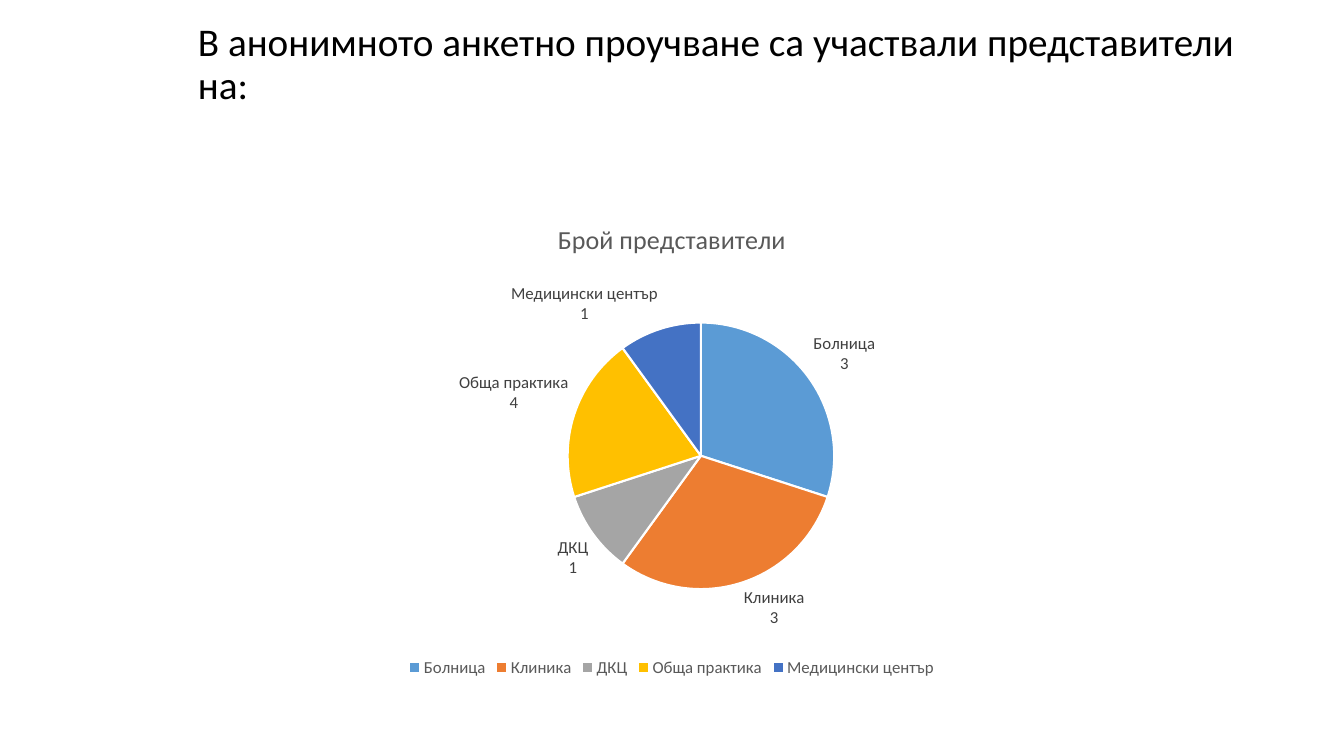
"""Build a slide with a survey heading and a pie chart of the participants."""
from lxml import etree
from pptx import Presentation
from pptx.chart.data import CategoryChartData
from pptx.dml.color import RGBColor
from pptx.enum.chart import XL_CHART_TYPE, XL_LABEL_POSITION, XL_LEGEND_POSITION
from pptx.enum.text import MSO_ANCHOR
from pptx.oxml.ns import qn
from pptx.util import Pt

PIE = XL_CHART_TYPE.PIE
OUTSIDE_END = XL_LABEL_POSITION.OUTSIDE_END
LEGEND_BOTTOM = XL_LEGEND_POSITION.BOTTOM
MIDDLE = MSO_ANCHOR.MIDDLE

EMU_PER_PX = 9525
FONT_NAME = "Calibri"
BLACK = RGBColor(0x00, 0x00, 0x00)
WHITE = RGBColor(0xFF, 0xFF, 0xFF)
GREY = RGBColor(0x59, 0x59, 0x59)
DARK_GREY = RGBColor(0x40, 0x40, 0x40)
BLUE = RGBColor(0x5B, 0x9B, 0xD5)
ORANGE = RGBColor(0xED, 0x7D, 0x31)
SILVER = RGBColor(0xA5, 0xA5, 0xA5)
GOLD = RGBColor(0xFF, 0xC0, 0x00)
ROYAL_BLUE = RGBColor(0x44, 0x72, 0xC4)

HEADING_FORMAT = {"size": Pt(28), "color": BLACK}
CHART_TITLE_FORMAT = {"size": Pt(18.6), "color": GREY, "bold": False}
LABEL_FORMAT = {"size": Pt(12), "color": DARK_GREY, "bold": False}
LEGEND_FORMAT = {"size": Pt(12), "color": GREY}

HEADING = "В анонимното анкетно проучване са участвали представители на:"
CHART_TITLE = "Брой представители"
PARTICIPANTS = [
    ("Болница", 30, 3, BLUE),
    ("Клиника", 30, 3, ORANGE),
    ("ДКЦ", 10, 1, SILVER),
    ("Обща практика", 20, 4, GOLD),
    ("Медицински център", 10, 1, ROYAL_BLUE),
]
PIE_LAYOUT = {"x": 0.41, "y": 0.25, "w": 0.23, "h": 0.56}


def px(*lengths):
    """Turn pixel lengths into a list of EMU lengths."""
    return [length * EMU_PER_PX for length in lengths]


def format_font(font, values):
    """Apply a dict of format values to a font."""
    font.name = FONT_NAME
    for name, value in values.items():
        if name == "color":
            font.color.rgb = value
        else:
            setattr(font, name, value)


def fill_text(text_frame, text, values):
    """Write text into a frame and format all of its runs."""
    text_frame.text = text
    for paragraph in text_frame.paragraphs:
        for run in paragraph.runs:
            format_font(run.font, values)


def add_heading(slide):
    """Add the heading above the chart."""
    text_frame = slide.shapes.add_textbox(*px(179, 20, 1014, 84)).text_frame
    text_frame.word_wrap = True
    text_frame.vertical_anchor = MIDDLE
    fill_text(text_frame, HEADING, HEADING_FORMAT)
    text_frame.paragraphs[0].line_spacing = 0.9


def place_pie(chart, layout_values):
    """Fix the inner plot area at the given fractions of the chart."""
    plot_area = chart.plots[0]._element.getparent()
    layout = plot_area.find(qn("c:layout"))
    if layout is None:
        layout = etree.Element(qn("c:layout"))
        plot_area.insert(0, layout)
    manual = etree.SubElement(layout, qn("c:manualLayout"))
    settings = {"layoutTarget": "inner", "xMode": "edge", "yMode": "edge", **layout_values}
    for name, value in settings.items():
        etree.SubElement(manual, qn(f"c:{name}")).set("val", str(value))


def format_slice(point, category, count, color):
    """Colour one slice and label it with its category and count."""
    point.format.fill.solid()
    point.format.fill.fore_color.rgb = color
    point.format.line.color.rgb = WHITE
    point.format.line.width = Pt(1.5)
    label = point.data_label
    fill_text(label.text_frame, f"{category}\n{count}", LABEL_FORMAT)
    label.position = OUTSIDE_END


def add_legend(chart):
    """Add the legend below the pie."""
    chart.has_legend = True
    chart.legend.position = LEGEND_BOTTOM
    chart.legend.include_in_layout = False
    format_font(chart.legend.font, LEGEND_FORMAT)


def add_participants_chart(slide):
    """Add the pie chart of participants."""
    data = CategoryChartData()
    data.categories = [category for category, *_ in PARTICIPANTS]
    data.add_series("Series 1", [share for _, share, *_ in PARTICIPANTS])
    chart = slide.shapes.add_chart(PIE, *px(88, 192, 1104, 457), data).chart
    format_font(chart.font, {"size": Pt(10), "color": BLACK})
    chart.has_title = True
    fill_text(chart.chart_title.text_frame, CHART_TITLE, CHART_TITLE_FORMAT)
    add_legend(chart)
    place_pie(chart, PIE_LAYOUT)
    plot = chart.plots[0]
    plot.vary_by_categories = True
    series = plot.series[0]
    labels = series.data_labels
    labels.show_value = False
    labels.show_category_name = True
    labels.show_percentage = True
    labels.position = OUTSIDE_END
    format_font(labels.font, LABEL_FORMAT)
    for index, (category, _, count, color) in enumerate(PARTICIPANTS):
        format_slice(series.points[index], category, count, color)


def main():
    """Build and save the presentation."""
    presentation = Presentation()
    presentation.slide_width, presentation.slide_height = px(1280, 720)
    slide = presentation.slides.add_slide(presentation.slide_layouts[6])
    add_heading(slide)
    add_participants_chart(slide)
    presentation.save("out.pptx")


if __name__ == "__main__":
    main()
